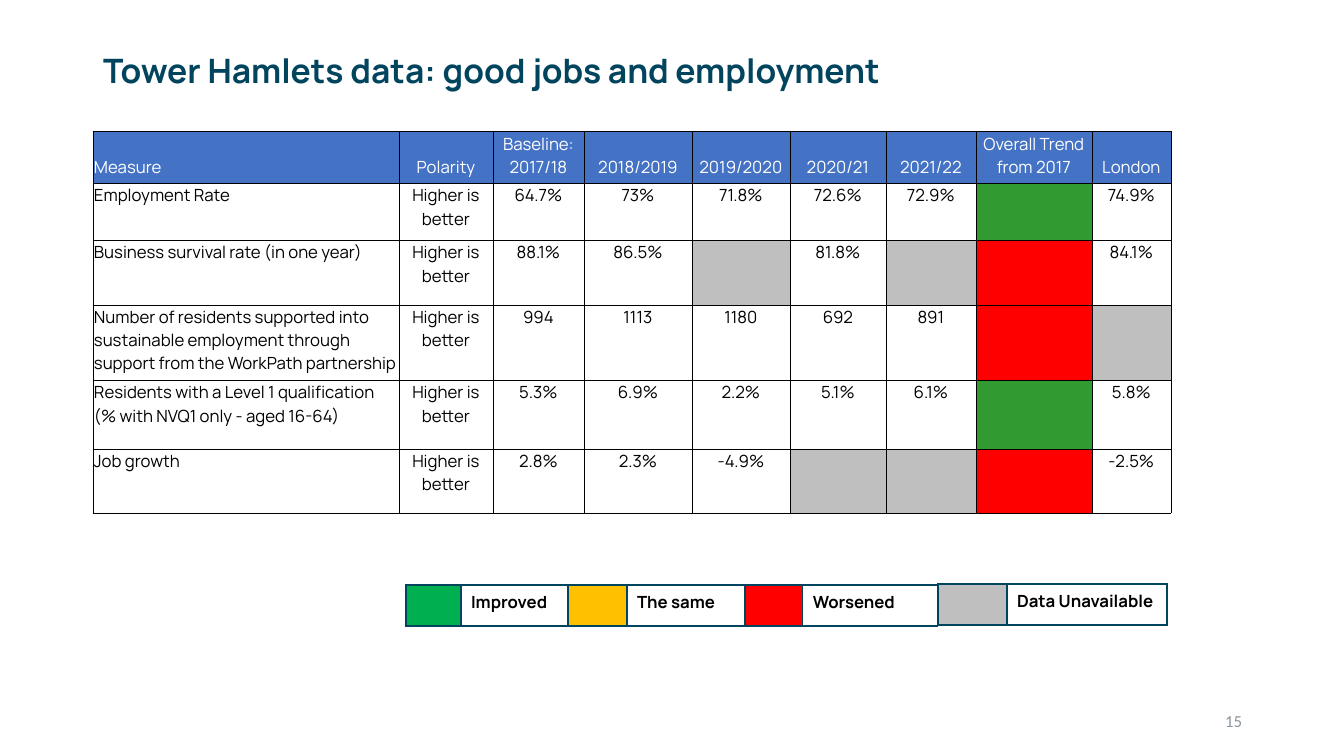
"""Build the Tower Hamlets good jobs and employment slide."""
import lxml.etree
import pptx
import pptx.dml.color
import pptx.enum.text
import pptx.oxml.ns
import pptx.util

PX = 914400 / 100.8
ALIGN = pptx.enum.text.PP_ALIGN
ANCHOR = pptx.enum.text.MSO_ANCHOR
THEME = {
    "font": "Manrope", "number_font": "Calibri",
    "title_size": 24, "text_size": 12,
    "navy": "00445E", "header": "4472C4", "white": "FFFFFF", "black": "000000", "number": "8C949D",
    "improved": "319B31", "worsened": "FF0000", "unavailable": "BFBFBF",
    "legend_improved": "00B050", "legend_same": "FFC000",
}


def format_text(frame, color, size="text_size", font="font", bold=False, align=ALIGN.LEFT):
    """Apply one text style to every paragraph of a frame."""
    for paragraph in frame.paragraphs:
        paragraph.alignment = align
        style = {"name": THEME[font], "size": pptx.util.Pt(THEME[size]), "bold": bold}
        for attribute, value in style.items():
            setattr(paragraph.font, attribute, value)
        paragraph.font.color.rgb = pptx.dml.color.RGBColor.from_string(THEME[color])


def add_grid(left, top, widths, heights, border, points):
    """Add a plain table with even borders and return it."""
    frame = slide.shapes.add_table(
        len(heights), len(widths), round(left * PX), round(top * PX),
        round(sum(widths) * PX), round(sum(heights) * PX))
    grid = frame.table
    grid.first_row = grid.horz_banding = False
    for column, width in zip(grid.columns, widths):
        column.width = round(width * PX)
    for row, height in zip(grid.rows, heights):
        row.height = round(height * PX)
    qn = pptx.oxml.ns.qn
    for cell in grid.iter_cells():
        properties = cell._tc.get_or_add_tcPr()
        for side in ("a:lnL", "a:lnR", "a:lnT", "a:lnB"):
            line = lxml.etree.SubElement(properties, qn(side), w=str(pptx.util.Pt(points)))
            fill = lxml.etree.SubElement(line, qn("a:solidFill"))
            lxml.etree.SubElement(fill, qn("a:srgbClr"), val=THEME[border])
    return grid


deck = pptx.Presentation()
deck.slide_width = round(1344 * PX)
deck.slide_height = round(756 * PX)
slide = deck.slides.add_slide(deck.slide_layouts[5])

title = slide.shapes.title
title_box = {"left": 93, "top": 40, "width": 1159, "height": 66}
for attribute, value in title_box.items():
    setattr(title, attribute, round(value * PX))
title.text_frame.text = "Tower Hamlets data: good jobs and employment"
title.text_frame.vertical_anchor = ANCHOR.MIDDLE
title.text_frame.paragraphs[0].line_spacing = 0.9
format_text(title.text_frame, "navy", size="title_size", bold=True)

polarity = "Higher is better"
measures = [
    ["Measure", "Polarity", "Baseline:\n2017/18", "2018/2019", "2019/2020", "2020/21", "2021/22",
     "Overall Trend from 2017", "London"],
    ["Employment Rate", polarity, "64.7%", "73%", "71.8%", "72.6%", "72.9%", "improved", "74.9%"],
    ["Business survival rate (in one year)", polarity, "88.1%", "86.5%", "unavailable", "81.8%",
     "unavailable", "worsened", "84.1%"],
    ["Number of residents supported into sustainable employment through support from the "
     "WorkPath partnership", polarity, "994", "1113", "1180", "692", "891", "worsened", "unavailable"],
    ["Residents with a Level 1 qualification (% with NVQ1 only - aged 16-64)", polarity, "5.3%",
     "6.9%", "2.2%", "5.1%", "6.1%", "improved", "5.8%"],
    ["Job growth", polarity, "2.8%", "2.3%", "-4.9%", "unavailable", "unavailable", "worsened", "-2.5%"],
]
cell_format = {"margin_left": 1, "margin_right": 1, "margin_top": 1, "margin_bottom": 5}
measure_grid = add_grid(93, 131, [306, 94, 91, 108, 98, 96, 90, 116, 79],
                        [52, 57, 65, 75, 69, 64], "black", 0.5)
for row_index, measure in enumerate(measures):
    is_header = row_index == 0
    for column_index, entry in enumerate(measure):
        cell = measure_grid.cell(row_index, column_index)
        for attribute, value in cell_format.items():
            setattr(cell, attribute, round(value * PX))
        cell.vertical_anchor = ANCHOR.BOTTOM if is_header else ANCHOR.TOP
        is_status = entry in THEME
        cell.text = "" if is_status else entry
        background = entry if is_status else "header" if is_header else "white"
        cell.fill.solid()
        cell.fill.fore_color.rgb = pptx.dml.color.RGBColor.from_string(THEME[background])
        format_text(cell.text_frame, "white" if is_header else "black",
                    align=ALIGN.CENTER if column_index else ALIGN.LEFT)

legends = [
    (406, 585, [55, 107, 59, 118, 58, 135],
     [("legend_improved", "Improved"), ("legend_same", "The same"), ("worsened", "Worsened")]),
    (938, 584, [69, 160], [("unavailable", "Data Unavailable")]),
]
for left, top, widths, statuses in legends:
    legend_grid = add_grid(left, top, widths, [41], "navy", 1)
    for index, (status, label) in enumerate(statuses):
        for column_index, background, text in ((2 * index, status, ""), (2 * index + 1, "white", label)):
            cell = legend_grid.cell(0, column_index)
            cell.text = text
            cell.fill.solid()
            cell.fill.fore_color.rgb = pptx.dml.color.RGBColor.from_string(THEME[background])
            format_text(cell.text_frame, "black", bold=True)

page_number = slide.shapes.add_textbox(*(round(value * PX) for value in (950, 701, 302, 40))).text_frame
page_number.word_wrap = True
page_number.vertical_anchor = ANCHOR.MIDDLE
page_number.text = "15"
format_text(page_number, "number", font="number_font", align=ALIGN.RIGHT)

deck.save("out.pptx")
